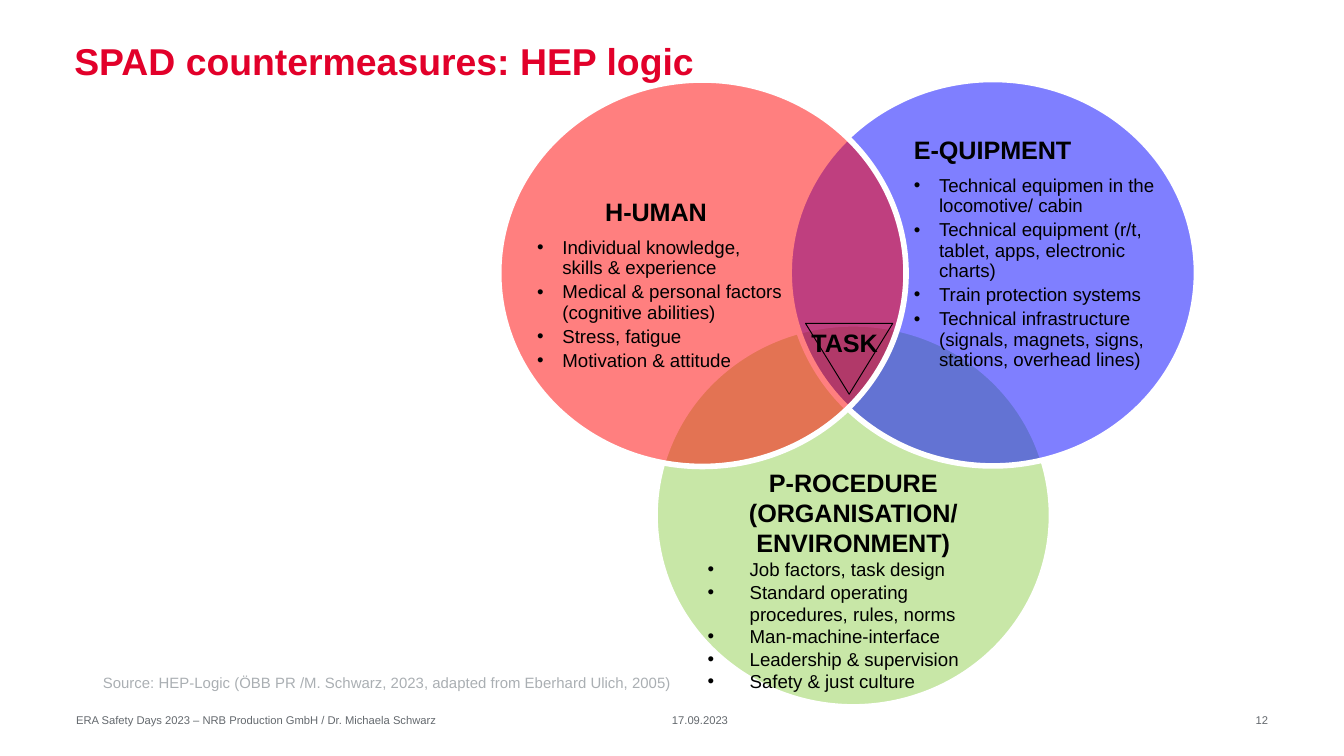
from dataclasses import dataclass

import pptx
import pptx.dml.color
import pptx.enum.shapes
import pptx.enum.text
import pptx.oxml.ns
import pptx.util
from lxml import etree

Pt = pptx.util.Pt
ALIGN = pptx.enum.text.PP_ALIGN
ANCHOR = pptx.enum.text.MSO_ANCHOR
SHAPE = pptx.enum.shapes.MSO_SHAPE
Frame = tuple[float, float, float, float]  # left, top, width, height in points


@dataclass
class Label:
    text: str
    frame: Frame
    size: float
    color: str
    bold: bool = False
    align: ALIGN = ALIGN.LEFT
    anchor: ANCHOR = ANCHOR.TOP
    line_spacing: float = 1.0


@dataclass
class Circle:
    frame: Frame
    color: str
    text_frame: Frame
    heading: str
    heading_align: ALIGN
    items: list[str]
    indent: float = 13.5
    line_spacing: float = 0.9
    heading_gap: float = 6
    item_gap: float = 2.2


CIRCLES = [
    Circle((350.9, 173.5, 212.4, 205.2), "92D050", (379.1, 250.4, 156, 122),
           "P-ROCEDURE (ORGANISATION/ ENVIRONMENT)", ALIGN.CENTER,
           ["Job factors, task design",
            "Standard operating procedures, rules, norms",
            "Man-machine-interface",
            "Leadership & supervision",
            "Safety & just culture"],
           indent=22.5, line_spacing=1.0, heading_gap=0, item_gap=0),
    Circle((422.8, 42.6, 218.2, 207), "0000FF", (489.6, 73.8, 130.5, 130),
           "E-QUIPMENT", ALIGN.LEFT,
           ["Technical equipmen in the locomotive/ cabin",
            "Technical equipment (r/t, tablet, apps, electronic charts)",
            "Train protection systems",
            "Technical infrastructure (signals, magnets, signs, stations, overhead lines)"]),
    Circle((267.2, 42.9, 218.2, 207), "FF0000", (287.8, 107, 131, 100),
           "H-UMAN ", ALIGN.CENTER,
           ["Individual knowledge, skills & experience",
            "Medical & personal factors (cognitive abilities)",
            "Stress, fatigue",
            "Motivation & attitude"]),
]

GREY = "64696E"
LABELS = [
    Label("SPAD countermeasures: HEP logic", (39.8, 12, 553, 33), 20, "E2002A",
          bold=True, anchor=ANCHOR.BOTTOM, line_spacing=0.9),
    Label("TASK", (418.7, 175.5, 67.5, 16), 13.5, "000000", bold=True, align=ALIGN.CENTER),
    Label("Source: HEP-Logic (ÖBB PR /M. Schwarz, 2023, adapted from Eberhard Ulich, 2005)",
          (39.8, 361, 320, 10), 8, "AAAFB3", align=ALIGN.RIGHT),
    Label("ERA Safety Days 2023 – NRB Production GmbH / Dr. Michaela Schwarz",
          (40.8, 382.2, 301, 14), 6, GREY),
    Label("17.09.2023", (360, 382.2, 119, 16), 6, GREY),
    Label("12", (651, 382.2, 28.3, 16), 6, GREY, align=ALIGN.RIGHT),
]


def rgb(color: str) -> pptx.dml.color.RGBColor:
    return pptx.dml.color.RGBColor.from_string(color)


def add_text_frame(page, frame: Frame, anchor: ANCHOR = ANCHOR.TOP):
    box = page.shapes.add_textbox(*map(Pt, frame))
    text = box.text_frame
    text.word_wrap = True
    text.vertical_anchor = anchor
    text.margin_left = text.margin_right = text.margin_top = text.margin_bottom = 0
    return text


def add_span(para, words: str, size: float, color: str, bold: bool) -> None:
    span = para.add_run()
    span.text = words
    span.font.name = "Arial"
    span.font.size = Pt(size)
    span.font.bold = bold
    span.font.color.rgb = rgb(color)


def add_bullet(para, indent: float) -> None:
    properties = para._p.get_or_add_pPr()
    properties.set("marL", str(Pt(indent)))
    properties.set("indent", str(-Pt(indent)))
    font = etree.SubElement(properties, pptx.oxml.ns.qn("a:buFont"))
    font.set("typeface", "Arial")
    bullet = etree.SubElement(properties, pptx.oxml.ns.qn("a:buChar"))
    bullet.set("char", "•")


def draw_label(page, label: Label) -> None:
    para = add_text_frame(page, label.frame, label.anchor).paragraphs[0]
    para.alignment = label.align
    para.line_spacing = label.line_spacing
    add_span(para, label.text, label.size, label.color, label.bold)


def draw_oval(page, circle: Circle) -> None:
    oval = page.shapes.add_shape(SHAPE.OVAL, *map(Pt, circle.frame))
    oval.shadow.inherit = False
    oval.fill.solid()
    oval.fill.fore_color.rgb = rgb(circle.color)
    color = oval.fill._xPr.find(".//" + pptx.oxml.ns.qn("a:srgbClr"))
    etree.SubElement(color, pptx.oxml.ns.qn("a:alpha")).set("val", "50000")
    oval.line.color.rgb = rgb("FFFFFF")
    oval.line.width = Pt(3)


def draw_circle_text(page, circle: Circle) -> None:
    text = add_text_frame(page, circle.text_frame)
    para = text.paragraphs[0]
    para.alignment = circle.heading_align
    para.line_spacing = circle.line_spacing
    para.space_after = Pt(circle.heading_gap)
    add_span(para, circle.heading, 13.5, "000000", True)
    for item in circle.items:
        para = text.add_paragraph()
        para.line_spacing = circle.line_spacing
        para.space_after = Pt(circle.item_gap)
        add_bullet(para, circle.indent)
        add_span(para, item, 10, "000000", False)


def draw_task_triangle(page) -> None:
    triangle = page.shapes.add_shape(SHAPE.ISOSCELES_TRIANGLE,
                                     Pt(431.5), Pt(173.2), Pt(46.8), Pt(38))
    triangle.rotation = 180
    triangle.shadow.inherit = False
    triangle.fill.background()
    triangle.line.color.rgb = rgb("000000")
    triangle.line.width = Pt(0.5)


def main() -> None:
    deck = pptx.Presentation()
    deck.slide_width, deck.slide_height = Pt(720), Pt(405)
    page = deck.slides.add_slide(deck.slide_layouts[6])

    # Overlapping circles with their texts
    for circle in CIRCLES:
        draw_oval(page, circle)
        draw_circle_text(page, circle)

    # Shared task in the middle
    draw_task_triangle(page)

    # Title, source and footer
    for label in LABELS:
        draw_label(page, label)

    deck.save("out.pptx")


if __name__ == "__main__":
    main()
